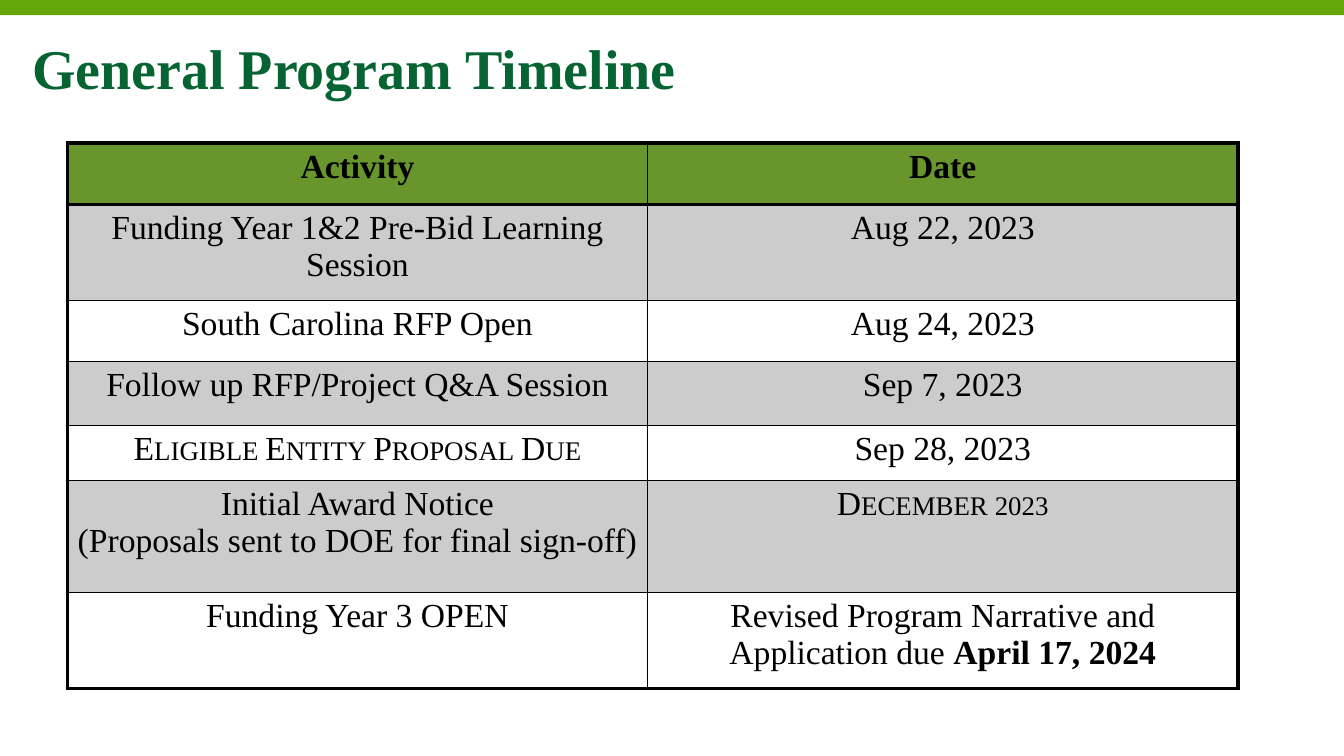
from lxml.etree import SubElement
from pptx import Presentation
from pptx.dml.color import RGBColor
from pptx.enum.shapes import MSO_SHAPE as SHAPE
from pptx.enum.text import MSO_ANCHOR as ANCHOR, PP_ALIGN as ALIGN
from pptx.oxml import parse_xml
from pptx.oxml.ns import nsdecls, qn
from pptx.util import Inches, Pt

COLORS = {"bar": "64A70B", "title": "066332", "header": "68952C",
          "ink": "000000", "paper": "FFFFFF"}
FONT = "Times New Roman"
COLS = [5.75, 5.86]
ROWS = [0.61, 0.95, 0.61, 0.63, 0.55, 1.11, 0.95]
TIMELINE = [
    ("Activity", "Date"),
    ("Funding Year 1&2 Pre-Bid Learning Session", "Aug 22, 2023"),
    ("South Carolina RFP Open", "Aug 24, 2023"),
    ("Follow up RFP/Project Q&A Session", "Sep 7, 2023"),
    ("Eligible Entity Proposal Due", "Sep 28, 2023"),
    ("Initial Award Notice\n(Proposals sent to DOE for final sign-off)", "December 2023"),
    ("Funding Year 3 OPEN", "Revised Program Narrative and Application due "),
]
SMALL_CAPS = {(4, 0), (5, 1)}
DEADLINE = "April 17, 2024"


def style(p, size, color, bold, align):
    p.alignment = align
    p.font.name, p.font.size, p.font.bold = FONT, Pt(size), bold
    p.font.color.rgb = RGBColor.from_string(COLORS[color])


def set_borders(cell, widths):
    tcPr = cell._tc.get_or_add_tcPr()
    for i, (side, width) in enumerate(zip("LRTB", widths)):
        tcPr.insert(i, parse_xml(
            f'<a:ln{side} {nsdecls("a")} w="{Pt(width)}"><a:solidFill>'
            f'<a:srgbClr val="{COLORS["ink"]}"/></a:solidFill></a:ln{side}>'))


prs = Presentation()
prs.slide_width, prs.slide_height = Inches(13.33), Inches(7.5)
s = prs.slides.add_slide(prs.slide_layouts[5])

# Top bar
bar = s.shapes.add_shape(SHAPE.RECTANGLE, 0, 0, prs.slide_width, Inches(0.15))
bar.shadow.inherit = False
bar.fill.solid()
bar.fill.fore_color.rgb = RGBColor.from_string(COLORS["bar"])
bar.line.fill.background()

# Title
title = s.shapes.title
title.left, title.top = Inches(0.22), Inches(0.08)
title.width, title.height = Inches(10.22), Inches(1.17)
tf = title.text_frame
tf.text = "General Program Timeline"
tf.vertical_anchor = ANCHOR.MIDDLE
style(tf.paragraphs[0], 40, "title", True, ALIGN.LEFT)

# Timeline table
table = s.shapes.add_table(len(ROWS), len(COLS), Inches(0.67), Inches(1.42),
                           Inches(sum(COLS)), Inches(sum(ROWS))).table
table.first_row = table.horz_banding = False
for column, width in zip(table.columns, COLS):
    column.width = Inches(width)
for row, height in zip(table.rows, ROWS):
    row.height = Inches(height)

last_row, last_col = len(ROWS) - 1, len(COLS) - 1
for i, texts in enumerate(TIMELINE):
    for j, text in enumerate(texts):
        cell = table.cell(i, j)
        tf = cell.text_frame
        tf.text = text
        for p in tf.paragraphs:
            style(p, 24, "ink", i == 0, ALIGN.CENTER)
            if (i, j) in SMALL_CAPS:
                p.runs[0]._r.get_or_add_rPr().set("cap", "small")

        # Header green, odd rows shaded, even rows white
        shaded = i % 2 == 1
        fill = "header" if i == 0 else "ink" if shaded else "paper"
        cell.fill.solid()
        cell.fill.fore_color.rgb = RGBColor.from_string(COLORS[fill])
        if shaded:
            color = cell._tc.tcPr.find(qn("a:solidFill")).find(qn("a:srgbClr"))
            SubElement(color, qn("a:alpha")).set("val", "20000")

        # Heavy frame, medium rule under the header, thin grid
        set_borders(cell, [3 if j == 0 else 1,
                           3 if j == last_col else 1,
                           {0: 3, 1: 2}.get(i, 1),
                           {0: 2, last_row: 3}.get(i, 1)])

# Bold deadline in the last cell
r = table.cell(last_row, last_col).text_frame.paragraphs[0].add_run()
r.text = DEADLINE
r.font.bold = True

prs.save("out.pptx")
